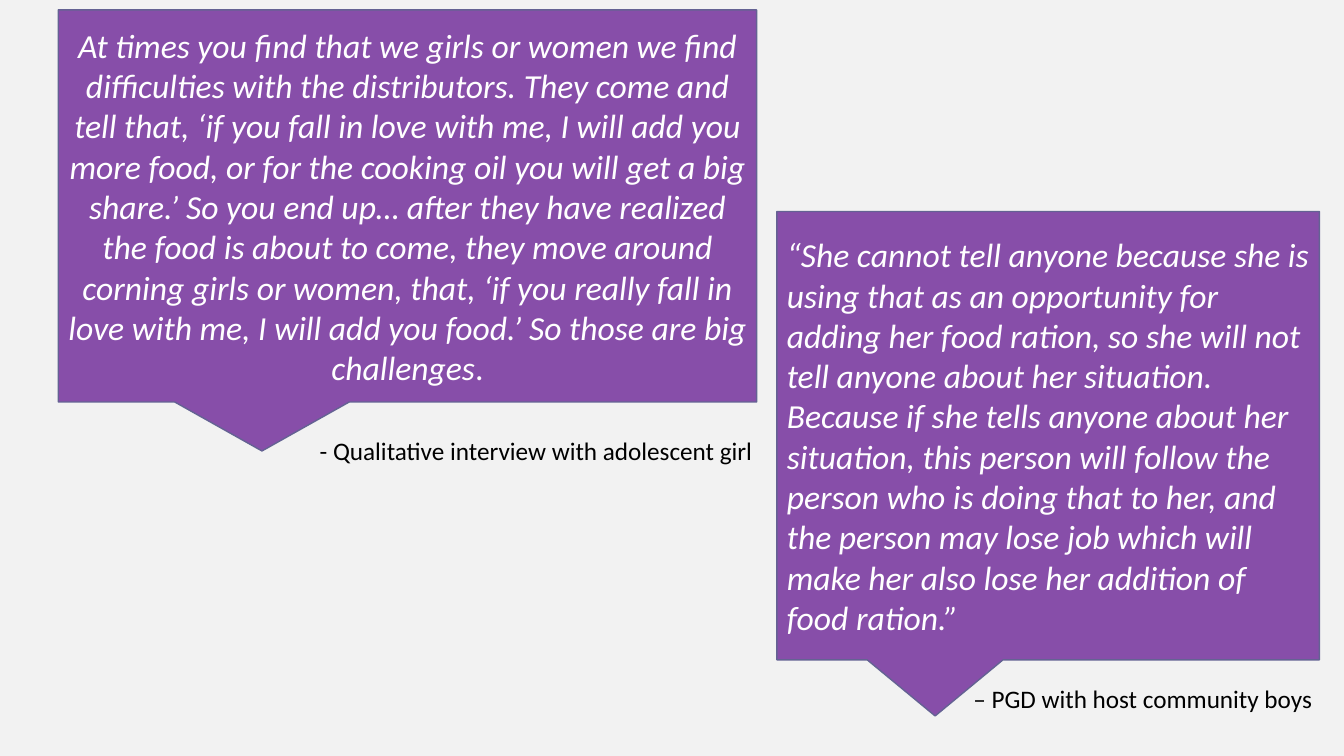
from pptx import Presentation
from pptx import util as u
from pptx.dml.color import RGBColor
from pptx.enum import shapes, text

COLORS = {
    "background": "F2F2F2",
    "callout": "874EA9",
    "outline": "646293",
    "quote": "FFFFFF",
    "source": "000000",
}
CENTER, LEFT = text.PP_ALIGN.CENTER, text.PP_ALIGN.LEFT


def add_run(paragraph, words, size, color, italic=False):
    run = paragraph.add_run()
    run.text = words
    run.font.name = "Calibri"
    run.font.size = u.Pt(size)
    run.font.italic = italic
    run.font.color.rgb = RGBColor.from_string(COLORS[color])


quotes = [
    {
        "callout": (1.47, 0.25, 17.6, 9.88),
        "runs": [
            ("At times you find that we girls or women we find difficulties with the "
             "distributors. They come and tell that, ‘if you fall in love with me, I will "
             "add you more food, or for the cooking oil you will get a big share.’ So you "
             "end up… after they have realized the food is about to come, they move around "
             "corning girls or women, that, ‘if you really fall in love with me, I will add "
             "you food.’ So those are big challenges", True),
            (".", False),
        ],
        "source": "- Qualitative interview with adolescent girl",
        "source_box": (7.72, 10.85, 11.58, 1.02),
        "align": CENTER,
    },
    {
        "callout": (19.58, 5.33, 13.67, 11.3),
        "runs": [
            ("“She cannot tell anyone because she is using that as an opportunity for adding "
             "her food ration, so she will not tell anyone about her situation. Because if "
             "she tells anyone about her situation, this person will follow the person who "
             "is doing that to her, and the person may lose job which will make her also "
             "lose her addition of food ration.”", True),
        ],
        "source": "– PGD with host community boys",
        "source_box": (24.28, 17.09, 9.35, 1.02),
        "align": LEFT,
    },
]

presentation = Presentation()
presentation.slide_width = u.Cm(33.87)
presentation.slide_height = u.Cm(19.05)
slide = presentation.slides.add_slide(presentation.slide_layouts[6])
slide.background.fill.solid()
slide.background.fill.fore_color.rgb = RGBColor.from_string(COLORS["background"])

for quote in quotes:
    group = slide.shapes.add_group_shape()

    callout = group.shapes.add_shape(
        shapes.MSO_SHAPE.RECTANGULAR_CALLOUT, *map(u.Cm, quote["callout"]))
    callout.shadow.inherit = False
    callout.fill.solid()
    callout.fill.fore_color.rgb = RGBColor.from_string(COLORS["callout"])
    callout.line.color.rgb = RGBColor.from_string(COLORS["outline"])
    callout.line.width = u.Pt(1)
    callout.text_frame.word_wrap = True
    callout.text_frame.vertical_anchor = text.MSO_ANCHOR.MIDDLE
    paragraph = callout.text_frame.paragraphs[0]
    paragraph.alignment = quote["align"]
    for words, italic in quote["runs"]:
        add_run(paragraph, words, size=24, color="quote", italic=italic)

    source = group.shapes.add_textbox(*map(u.Cm, quote["source_box"]))
    source.text_frame.word_wrap = False
    source.text_frame.auto_size = text.MSO_AUTO_SIZE.SHAPE_TO_FIT_TEXT
    paragraph = source.text_frame.paragraphs[0]
    paragraph.alignment = quote["align"]
    add_run(paragraph, quote["source"], size=18, color="source")

presentation.save("out.pptx")
